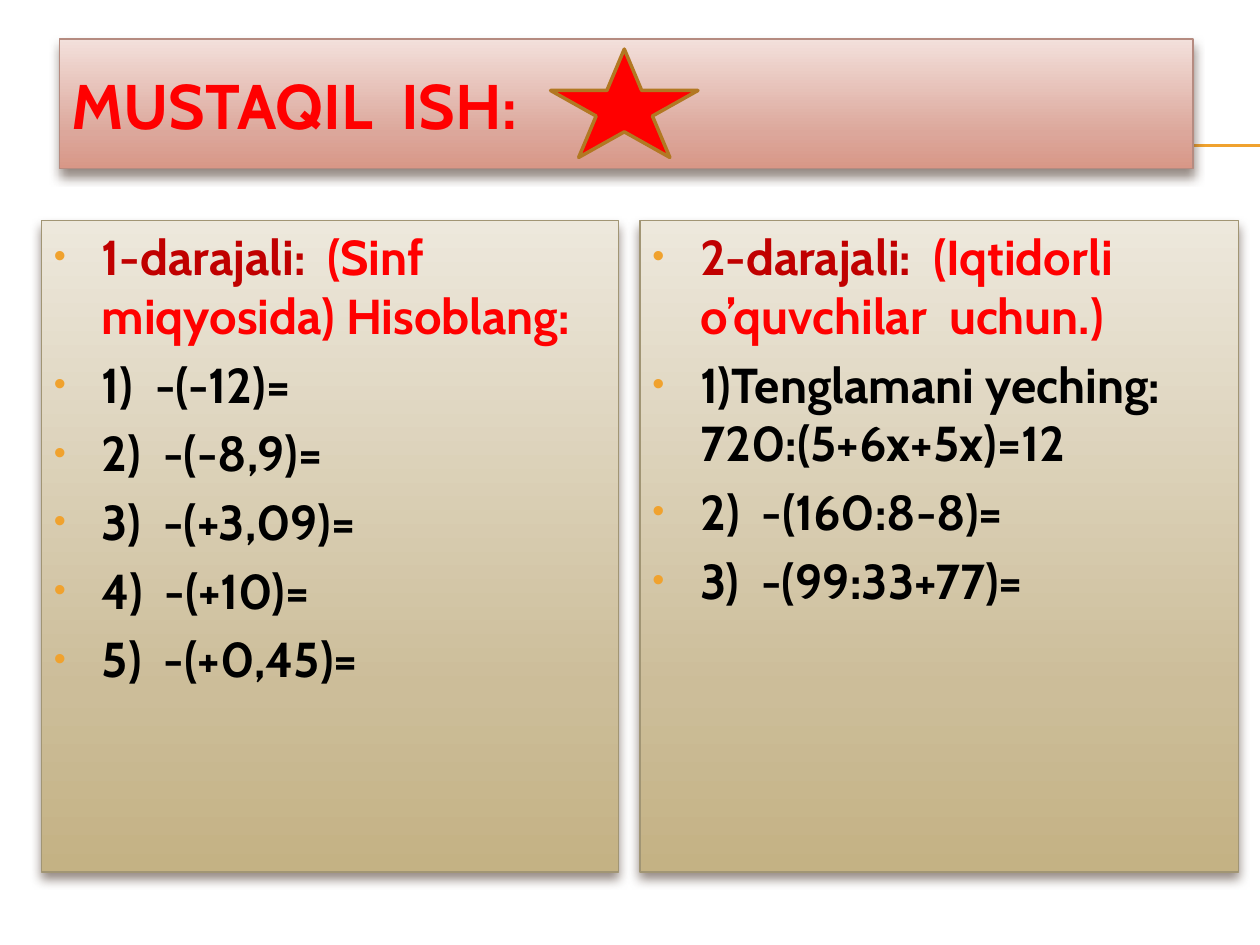
from copy import deepcopy
from lxml import etree
from pptx import Presentation
from pptx.dml.color import RGBColor
from pptx.enum.shapes import MSO_CONNECTOR, MSO_SHAPE
from pptx.enum.text import MSO_ANCHOR, MSO_AUTO_SIZE, PP_ALIGN
from pptx.oxml.ns import qn
from pptx.util import Inches, Pt

COLORS = {
    "accent": "F0A22E", "red": "FF0000", "dark_red": "C00000", "black": "000000",
    "title_edge": "B58B80", "panel_edge": "A19574", "star_edge": "B27822", "shadow": "4E3B30",
}
TITLE_FADE = {0: "F3E0DB", 0.72: "DCA79B", 1: "D89787"}
PANEL_FADE = {0: "EDE8DC", 0.72: "CCBD99", 1: "C4B284"}
FONT = "Cabin"


def style_panel(panel, fade, edge):
    panel.fill.gradient()
    panel.fill.gradient_angle = 270
    stop_list = panel._element.spPr.find(".//" + qn("a:gsLst"))
    stop_list.append(deepcopy(stop_list[0]))
    for stop, (position, color) in zip(panel.fill.gradient_stops, fade.items()):
        stop.position = position
        stop.color.rgb = RGBColor.from_string(color)
    panel.line.color.rgb = RGBColor.from_string(COLORS[edge])
    panel.line.width = Pt(0.79)
    panel.shadow.inherit = False
    shadow = etree.SubElement(
        panel._element.spPr.find(qn("a:effectLst")), qn("a:outerShdw"),
        blurRad=str(Pt(6)), dist=str(Pt(4)), dir="5400000", rotWithShape="0")
    tint = etree.SubElement(shadow, qn("a:srgbClr"), val=COLORS["shadow"])
    etree.SubElement(tint, qn("a:alpha"), val="60000")


def write_run(paragraph, text, size, color):
    run = paragraph.add_run()
    run.text = text
    run.font.name = FONT
    run.font.size = Pt(size)
    run.font.bold = True
    run.font.color.rgb = RGBColor.from_string(COLORS[color])


prs = Presentation()
prs.slide_width, prs.slide_height = Inches(10), Inches(7.5)
slide = prs.slides.add_slide(prs.slide_layouts[5])

for rule_top in (1.15, 1.16):
    rule = slide.shapes.add_connector(
        MSO_CONNECTOR.STRAIGHT, Inches(0.56), Inches(rule_top), prs.slide_width, Inches(rule_top))
    rule.line.color.rgb = RGBColor.from_string(COLORS["accent"])
    rule.line.width = Pt(0.75)
    etree.SubElement(rule._element.spPr, qn("a:effectLst"))

title = slide.shapes.title
slide.shapes._spTree.append(title._element)
title.left, title.top, title.width, title.height = map(Inches, (0.47, 0.31, 9, 1.03))
style_panel(title, TITLE_FADE, "title_edge")
title.text_frame.auto_size = MSO_AUTO_SIZE.NONE
title.text_frame.vertical_anchor = MSO_ANCHOR.MIDDLE
title.text_frame.paragraphs[0].alignment = PP_ALIGN.LEFT
write_run(title.text_frame.paragraphs[0], "MUSTAQIL  ISH:", 36, "red")

levels = [
    (0.33, 4.58, "1-darajali:  ", "(Sinf  miqyosida) Hisoblang:",
     ["1)  -(-12)=", "2)  -(-8,9)=", "3)  -(+3,09)=", "4)  -(+10)=", "5)  -(+0,45)="]),
    (5.08, 4.75, "2-darajali:  ", "(Iqtidorli o’quvchilar  uchun.)",
     ["1)Tenglamani yeching: 720:(5+6x+5x)=12", "2)  -(160:8-8)=", "3)  -(99:33+77)="]),
]
for left, width, level, audience, tasks in levels:
    panel = slide.shapes.add_shape(
        MSO_SHAPE.RECTANGLE, Inches(left), Inches(1.75), Inches(width), Inches(5.17))
    style_panel(panel, PANEL_FADE, "panel_edge")
    frame = panel.text_frame
    frame.word_wrap = True
    frame.vertical_anchor = MSO_ANCHOR.TOP
    entries = [[(level, "dark_red"), (audience, "red")]] + [[(task, "black")] for task in tasks]
    for number, entry in enumerate(entries):
        paragraph = frame.add_paragraph() if number else frame.paragraphs[0]
        paragraph.alignment = PP_ALIGN.LEFT
        paragraph.space_before = Pt(5.6)
        properties = paragraph._p.get_or_add_pPr()
        properties.set("marL", str(Inches(0.38)))
        properties.set("indent", str(Inches(-0.38)))
        bullet_color = etree.SubElement(properties, qn("a:buClr"))
        etree.SubElement(bullet_color, qn("a:srgbClr"), val=COLORS["accent"])
        etree.SubElement(properties, qn("a:buSzPct"), val="70000")
        etree.SubElement(properties, qn("a:buFont"), typeface="Arial")
        etree.SubElement(properties, qn("a:buChar"), char="•")
        for text, color in entry:
            write_run(paragraph, text, 28, color)

star = slide.shapes.add_shape(
    MSO_SHAPE.STAR_5_POINT, Inches(4.37), Inches(0.39), Inches(1.17), Inches(0.86))
star.fill.solid()
star.fill.fore_color.rgb = RGBColor.from_string(COLORS["red"])
star.line.color.rgb = RGBColor.from_string(COLORS["star_edge"])
star.line.width = Pt(2)
star.shadow.inherit = False

prs.save("out.pptx")
